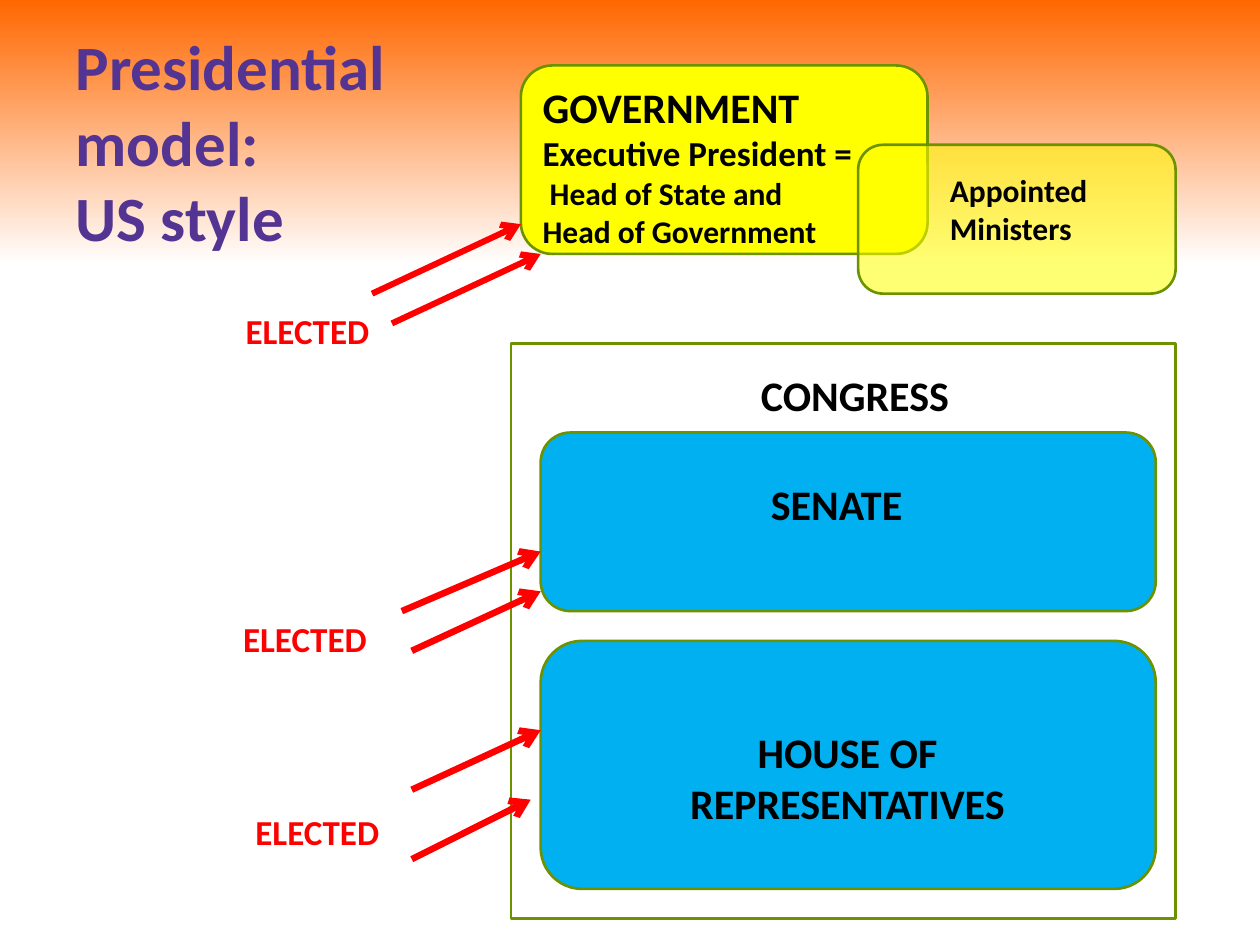
from lxml import etree
from pptx import Presentation
from pptx.dml.color import RGBColor
from pptx.enum.shapes import MSO_CONNECTOR, MSO_SHAPE
from pptx.enum.text import MSO_ANCHOR, MSO_AUTO_SIZE, PP_ALIGN
from pptx.oxml.ns import qn
from pptx.util import Cm, Pt

RECT = MSO_SHAPE.RECTANGLE
ROUND = MSO_SHAPE.ROUNDED_RECTANGLE
LINE = MSO_CONNECTOR.STRAIGHT
MIDDLE = MSO_ANCHOR.MIDDLE
FIXED = MSO_AUTO_SIZE.NONE
LEFT = PP_ALIGN.LEFT
CENTER = PP_ALIGN.CENTER

HUES = {
    "sky": "FF6700",
    "white": "FFFFFF",
    "title": "533492",
    "gold": "FFFF00",
    "blue": "00B0F0",
    "edge": "6D9200",
    "red": "FF0000",
    "black": "000000",
}


def hue(name):
    return RGBColor.from_string(HUES[name])


def style(run, size, tint):
    looks = {"name": "Calibri", "size": Pt(size), "bold": True}
    for key, value in looks.items():
        setattr(run.font, key, value)
    run.font.color.rgb = hue(tint)


def place(shape, spot):
    for key, value in zip(("left", "top", "width", "height"), spot):
        setattr(shape, key, Cm(value))


def paint(slide):
    fill = slide.background.fill
    fill.gradient()
    fill.gradient_angle = 270
    for stop, (pos, name) in zip(fill.gradient_stops, ((0, "sky"), (0.28, "white"))):
        stop.position = pos
        stop.color.rgb = hue(name)


def head(slide, text, spot):
    title = slide.shapes.title
    place(title, spot)
    frame = title.text_frame
    frame.text = text
    looks = {"word_wrap": True, "auto_size": FIXED, "vertical_anchor": MIDDLE}
    for key, value in looks.items():
        setattr(frame, key, value)
    para = frame.paragraphs[0]
    para.alignment = LEFT
    for run in para.runs:
        style(run, 36, "title")


def box(slide, kind, spot, fill=None, alpha=None):
    shape = slide.shapes.add_shape(kind, *map(Cm, spot))
    shape.shadow.inherit = False
    shape.line.color.rgb = hue("edge")
    shape.line.width = Pt(1.5)
    if fill is None:
        shape.fill.background()
        return
    shape.fill.solid()
    shape.fill.fore_color.rgb = hue(fill)
    if alpha:
        tone = shape.fill._xPr.find(qn("a:solidFill"))[0]
        etree.SubElement(tone, qn("a:alpha"), val=str(alpha * 1000))


def label(slide, spot, lines, tint="black", align=LEFT):
    frame = slide.shapes.add_textbox(*map(Cm, spot)).text_frame
    frame.word_wrap = True
    for i, parts in enumerate(lines):
        para = frame.add_paragraph() if i else frame.paragraphs[0]
        para.alignment = align
        for text, size in parts:
            run = para.add_run()
            run.text = text
            style(run, size, tint)


def arrow(slide, ends, width):
    link = slide.shapes.add_connector(LINE, *map(Cm, ends))
    link.line.color.rgb = hue("red")
    link.line.width = Pt(width)
    etree.SubElement(link.line._get_or_add_ln(), qn("a:tailEnd"), type="arrow")
    etree.SubElement(link._element.spPr, qn("a:effectLst"))


def main():
    deck = Presentation()
    deck.slide_width, deck.slide_height = Cm(25.4), Cm(19.05)
    slide = deck.slides.add_slide(deck.slide_layouts[5])
    paint(slide)
    head(slide, "Presidential model:\vUS style", (1.27, 0.76, 8.03, 4.17))

    box(slide, ROUND, (10.5, 1.32, 8.2, 3.8), "gold")
    label(slide, (10.69, 1.52, 6.81, 3.68), [
        [("GOVERNMENT", 24)],
        [("Executive President = ", 20), (" Head of State and Head of Government", 18)],
    ])
    box(slide, ROUND, (17.3, 2.92, 6.4, 3), "gold", 55)
    label(slide, (18.9, 3.33, 3.61, 1.8), [[("Appointed Ministers", 18)]])

    box(slide, RECT, (10.3, 6.92, 13.4, 11.6))
    label(slide, (15.09, 7.32, 4.8, 1.27), [[("CONGRESS", 24)]])
    for top, height in ((8.72, 3.6), (12.92, 5)):
        box(slide, ROUND, (10.9, top, 12.4, height), "blue")
    label(slide, (15.29, 9.52, 3.2, 1.27), [[("SENATE", 24)]])
    label(slide, (13.49, 14.53, 7.19, 2.31), [[("HOUSE OF REPRESENTATIVES", 24)]],
          align=CENTER)

    for ends, width in (
        ((7.9, 6.52, 10.9, 5.12), 3.5),
        ((7.5, 5.92, 10.5, 4.52), 3.5),
        ((8.1, 12.32, 10.9, 11.12), 3.75),
        ((8.3, 13.12, 10.9, 11.92), 3.75),
        ((8.3, 15.92, 10.9, 14.72), 3.75),
        ((8.3, 17.32, 10.7, 16.12), 3.75),
    ):
        arrow(slide, ends, width)
    for left, top in ((4.7, 6.12), (4.65, 12.32), (4.9, 16.21)):
        label(slide, (left, top, 3.2, 1.11), [[("ELECTED", 20)]], "red")

    deck.save("out.pptx")


if __name__ == "__main__":
    main()
